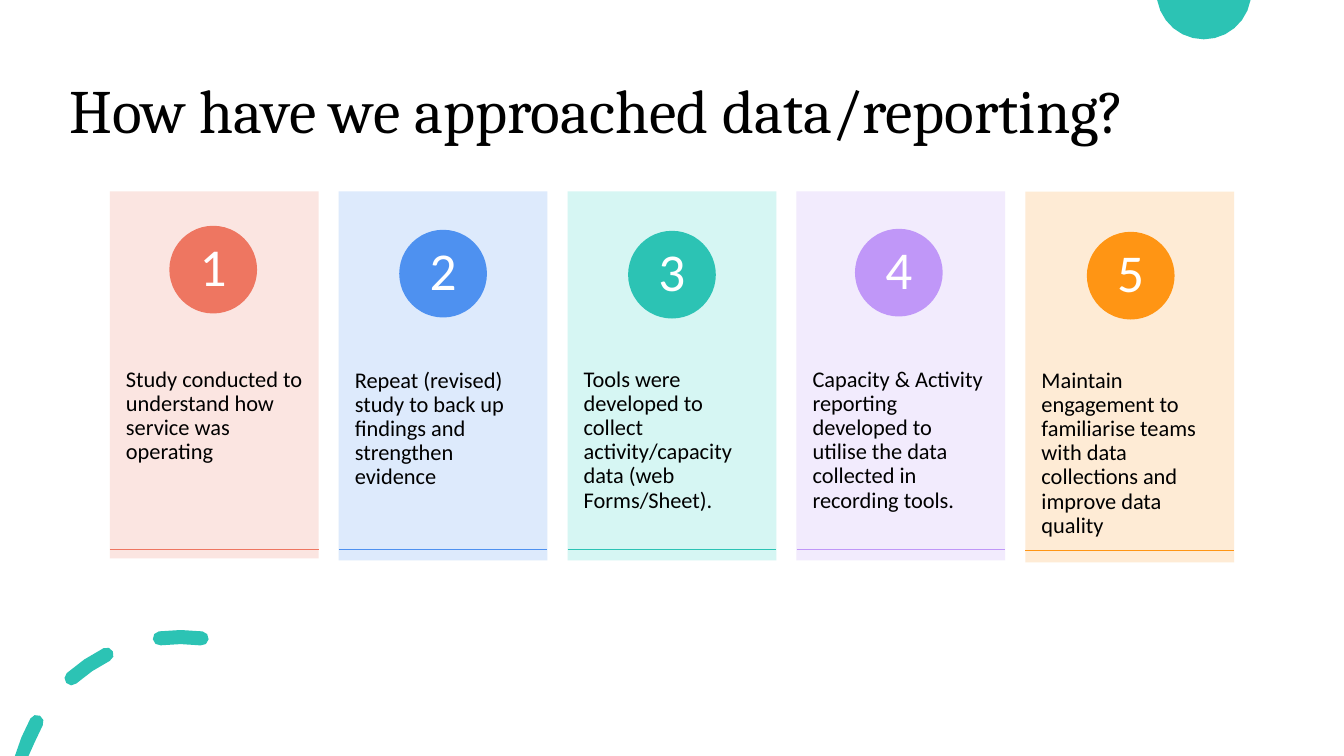
import math
from lxml import etree
from pptx import Presentation
from pptx.dml.color import RGBColor
from pptx.enum import shapes as sh, text as tx
from pptx.oxml import ns
from pptx.util import Inches, Pt

COLORS = {"ink": "000000", "white": "FFFFFF", "teal": "2CC3B4"}

# tint, accent, card height, disc left, disc top, text top, rule top, text
STEPS = [
    ("FBE2DE", "EE7661", 3.64, 1.68, 2.24, 3.29, 5.45,
     "Study conducted to understand how service was operating"),
    ("D9E8FC", "4E91F0", 3.66, 3.96, 2.28, 3.3, 5.45,
     "Repeat (revised) study to back up findings and strengthen evidence"),
    ("D1F5F2", "2CC3B4", 3.66, 6.23, 2.29, 3.29, 5.45,
     "Tools were developed to collect activity/capacity data (web Forms/Sheet)."),
    ("F1E9FD", "C097F8", 3.66, 8.48, 2.27, 3.29, 5.45,
     "Capacity & Activity reporting developed to utilise the data collected "
     "in recording tools."),
    ("FEE9D0", "FF9514", 3.68, 10.78, 2.3, 3.3, 5.46,
     "Maintain engagement to familiarise teams with data collections and "
     "improve data quality"),
]
CARD_X, STEP_X, CARD_W, DISC = 1.09, 2.27, 2.07, 0.87

prs = Presentation()
prs.slide_width, prs.slide_height = Inches(13.33), Inches(7.5)
slide = prs.slides.add_slide(prs.slide_layouts[5])
shapes = slide.shapes


def paint(shape, color):
    shape.shadow.inherit = False
    shape.fill.solid()
    shape.fill.fore_color.rgb = RGBColor.from_string(color)
    shape.line.fill.background()


def write(shape, words, font, size, color, align, anchor, inset):
    frame = shape.text_frame
    frame.word_wrap = True
    frame.auto_size = tx.MSO_AUTO_SIZE.NONE
    frame.vertical_anchor = anchor
    frame.margin_left = frame.margin_right = Inches(inset[0])
    frame.margin_top = frame.margin_bottom = Inches(inset[1])
    frame.text = words
    para = frame.paragraphs[0]
    para.alignment, para.line_spacing = align, 0.9
    para.font.name, para.font.size = font, Pt(size)
    para.font.color.rgb = RGBColor.from_string(color)


# Half disc cut by the top edge
mid_x, mid_y, rad = 11.94, -0.08, 0.47
edge = math.degrees(math.asin(-mid_y / rad))
turns = [math.radians(edge + (180 - 2 * edge) * i / 12) for i in range(13)]
rim = [(Inches(mid_x + rad * math.cos(t)), Inches(mid_y + rad * math.sin(t)))
       for t in turns]
pen = shapes.build_freeform(*rim[0], scale=1.0)
pen.add_line_segments(rim[1:])
paint(pen.convert_to_shape(), COLORS["teal"])

# Round-ended dashes along an arc, cut by the bottom edge
mid_x, mid_y, rad, half = 1.79, 7.95, 1.63, 0.07
pen = None
for start, end in [(15, 28.9), (48.5, 63.3), (82.8, 97.4)]:
    mid = (start + end) / 2
    caps = (0, 45, 90, 135, 180)
    trace = [(mid, rad + half, mid, 0)]
    trace += [(end, rad, end + c, half) for c in caps]
    trace += [(mid, rad - half, mid, 0)]
    trace += [(start, rad, start + 180 + c, half) for c in caps]
    points = []
    for a, r, b, s in trace:
        a, b = math.radians(a), math.radians(b)
        x = mid_x - r * math.cos(a) - s * math.cos(b)
        y = mid_y - r * math.sin(a) - s * math.sin(b)
        points.append((Inches(x), Inches(min(y, 7.5))))
    if pen is None:
        pen = shapes.build_freeform(*points[0], scale=1.0)
    else:
        pen.move_to(*points[0])
    pen.add_line_segments(points[1:])
paint(pen.convert_to_shape(), COLORS["teal"])

# Title
title = shapes.title
title.left, title.top = Inches(0.59), Inches(0.4)
title.width, title.height = Inches(11.5), Inches(1.45)
write(title, "How have we approached data/reporting?", "Cambria", 44,
      COLORS["ink"], tx.PP_ALIGN.LEFT, tx.MSO_ANCHOR.MIDDLE, (0.1, 0.05))

# Step cards
for num, step in enumerate(STEPS):
    tint, accent, tall, disc_x, disc_y, text_y, rule_y, words = step
    left = CARD_X + STEP_X * num
    card = shapes.add_shape(sh.MSO_SHAPE.RECTANGLE, Inches(left), Inches(1.9),
                            Inches(CARD_W), Inches(tall))
    paint(card, tint)
    hue = card.fill._xPr.find(".//" + ns.qn("a:srgbClr"))
    etree.SubElement(hue, ns.qn("a:alpha"), val="89000")

    box = shapes.add_textbox(Inches(left), Inches(text_y),
                             Inches(CARD_W), Inches(2.19))
    write(box, words, "Calibri", 16, COLORS["ink"], tx.PP_ALIGN.LEFT,
          tx.MSO_ANCHOR.TOP, (0.16, 0.36))

    disc = shapes.add_shape(sh.MSO_SHAPE.OVAL, Inches(disc_x), Inches(disc_y),
                            Inches(DISC), Inches(DISC))
    paint(disc, accent)
    write(disc, str(num + 1), "Calibri", 38, COLORS["white"],
          tx.PP_ALIGN.CENTER, tx.MSO_ANCHOR.MIDDLE, (0.07, 0.01))

    rule = shapes.add_connector(sh.MSO_CONNECTOR.STRAIGHT, Inches(left),
                                Inches(rule_y), Inches(left + CARD_W),
                                Inches(rule_y))
    rule.line.color.rgb = RGBColor.from_string(accent)
    rule.line.width = Pt(1)
    etree.SubElement(rule._element.spPr, ns.qn("a:effectLst"))

prs.save("out.pptx")
